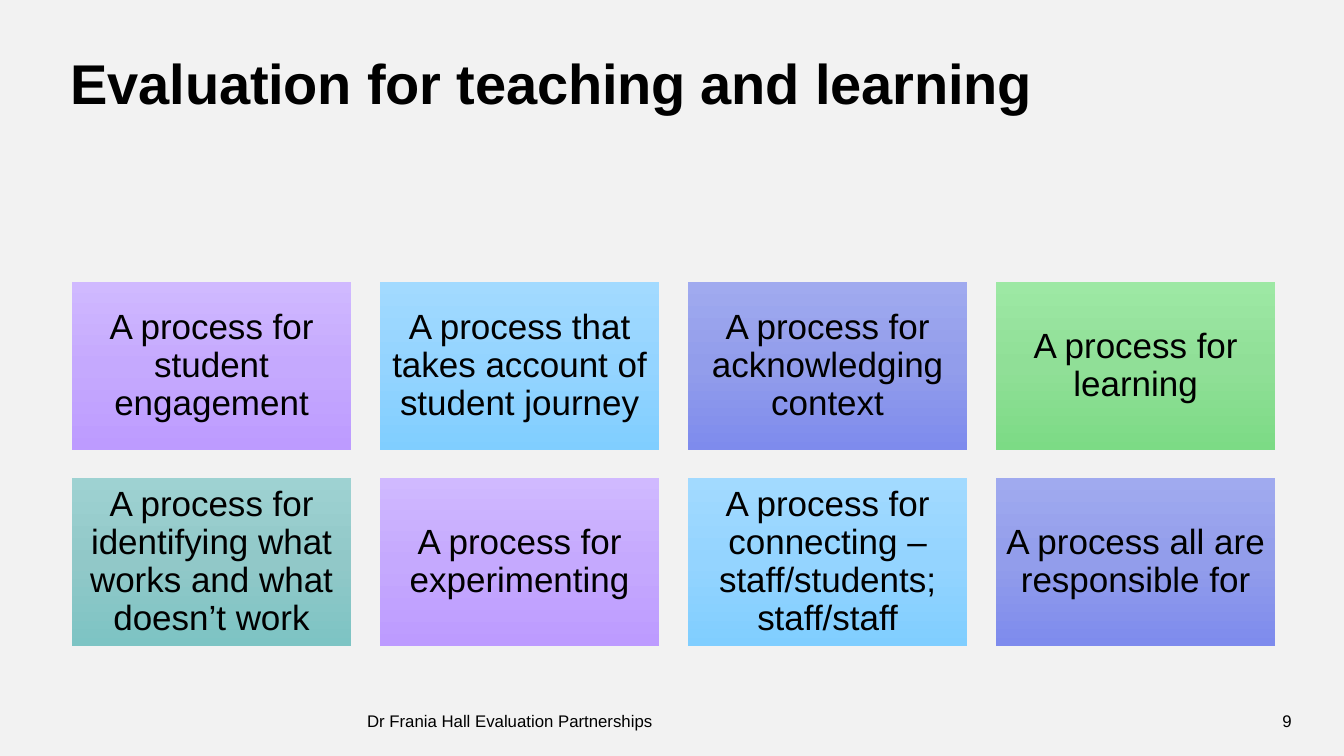
from copy import deepcopy
from dataclasses import dataclass

from pptx import Presentation
from pptx.dml.color import RGBColor as RGB
from pptx.enum.shapes import MSO_SHAPE as Shape
from pptx.enum.text import MSO_ANCHOR as Anchor, PP_ALIGN as Align
from pptx.oxml.ns import qn
from pptx.util import Inches, Pt


@dataclass(frozen=True)
class Theme:
    font: str = "Arial"
    ink: str = "000000"
    back: str = "F2F2F2"
    title: int = 40
    body: int = 25
    small: int = 12
    # Top, middle and bottom colour of each card fill
    violet: tuple = ("D0B9FF", "C5A9FE", "BD9BFF")
    sky: tuple = ("A2DAFF", "94D4FF", "80CEFF")
    indigo: tuple = ("A0AAEF", "929DEB", "7E8BED")
    green: tuple = ("9DE8A4", "90DF97", "7CDB85")
    teal: tuple = ("9ED2D2", "91C8C8", "7DC4C4")


THEME = Theme()
FILLS = (THEME.violet, THEME.sky, THEME.indigo, THEME.green, THEME.teal)
CARDS = (
    "A process for student engagement",
    "A process that takes account of student journey",
    "A process for acknowledging context",
    "A process for learning",
    "A process for identifying what works and what doesn’t work",
    "A process for experimenting",
    "A process for connecting – staff/students; staff/staff",
    "A process all are responsible for",
)


def write(shape, text, size, align=Align.LEFT, inset=0, lead=1.0):
    """Fill a shape with one styled paragraph and return its run."""
    frame = shape.text_frame
    frame.text = text
    frame.word_wrap = True
    frame.vertical_anchor = Anchor.MIDDLE
    frame.margin_left = frame.margin_right = Inches(inset)
    frame.margin_top = frame.margin_bottom = Inches(inset)
    para = frame.paragraphs[0]
    para.alignment = align
    para.line_spacing = lead
    run = para.runs[0]
    run.font.name = THEME.font
    run.font.size = Pt(size)
    run.font.color.rgb = RGB.from_string(THEME.ink)
    return run


def label(slide, box, text, size, **style):
    shape = slide.shapes.add_textbox(*map(Inches, box))
    return write(shape, text, size, **style)


def shade(shape, colors):
    """Apply a vertical three-stop gradient."""
    fill = shape.fill
    fill.gradient()
    fill.gradient_angle = 270
    stops = shape._element.spPr.find(".//" + qn("a:gsLst"))
    stops.insert(1, deepcopy(stops[0]))
    for stop, place, color in zip(fill.gradient_stops, (0, 0.5, 1), colors):
        stop.position = place
        stop.color.rgb = RGB.from_string(color)


def add_title(slide, box):
    run = label(slide, box, "Evaluation for teaching and learning",
                THEME.title, lead=0.9)
    run.font.bold = True
    run._r.get_or_add_rPr().set("spc", "-10")


def add_cards(slide, box, cols=4, rows=2, gap=0.28):
    left, top, width, height = box
    wide = (width - gap * (cols - 1)) / cols
    high = (height - gap * (rows - 1)) / rows
    for i, text in enumerate(CARDS):
        row, col = divmod(i, cols)
        place = (left + col * (wide + gap), top + row * (high + gap), wide, high)
        card = slide.shapes.add_shape(Shape.RECTANGLE, *map(Inches, place))
        card.shadow.inherit = False
        card.line.fill.background()
        shade(card, FILLS[i % len(FILLS)])
        write(card, text, THEME.body, Align.CENTER, inset=0.1, lead=0.9)


def add_footer(slide, box, page=0.45):
    left, top, width, height = box
    split = width - page
    label(slide, (left, top, split, height),
          "Dr Frania Hall Evaluation Partnerships", THEME.small)
    label(slide, (left + split, top, page, height), "9", THEME.small,
          align=Align.RIGHT)


def main():
    deck = Presentation()
    deck.slide_width, deck.slide_height = Inches(13.33), Inches(7.5)
    slide = deck.slides.add_slide(deck.slide_layouts[6])
    back = slide.background.fill
    back.solid()
    back.fore_color.rgb = RGB.from_string(THEME.back)

    add_title(slide, (0.7, 0.38, 11.78, 0.96))
    add_cards(slide, (0.71, 2.8, 11.94, 3.61))
    add_footer(slide, (3.64, 6.95, 9.17, 0.4))
    deck.save("out.pptx")


if __name__ == "__main__":
    main()
